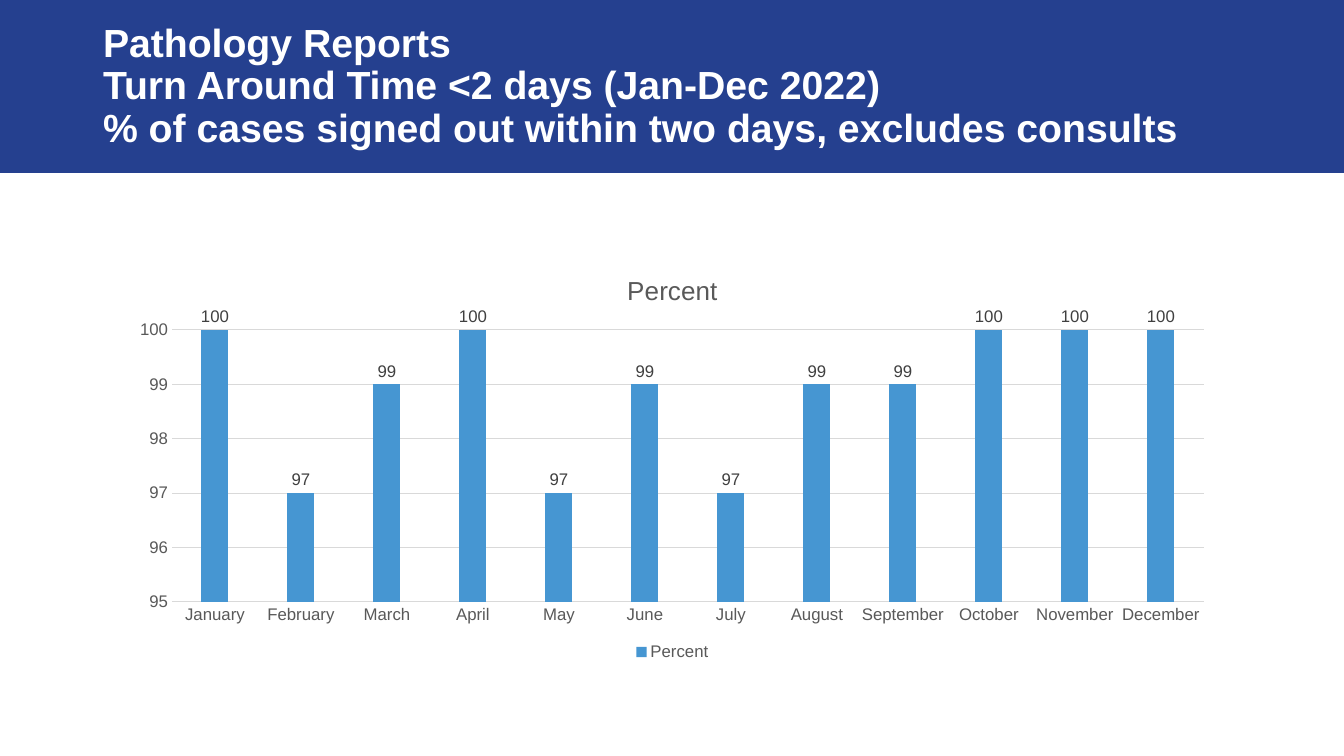
from dataclasses import dataclass

from lxml import etree
from pptx import Presentation
from pptx import util as u
from pptx.chart import data
from pptx.dml.color import RGBColor
from pptx.enum import chart as ch, shapes, text
from pptx.oxml import ns

# Content
HEAD = [
    "Pathology Reports",
    "Turn Around Time <2 days (Jan-Dec 2022)",
    "% of cases signed out within two days, excludes consults",
]
NAME = "Percent"
CASES = {
    "January": 100, "February": 97, "March": 99, "April": 100,
    "May": 97, "June": 99, "July": 97, "August": 99,
    "September": 99, "October": 100, "November": 100, "December": 100,
}

# Places in px: left, top, width, height
PAGE = (1344, 756)
BAND = (0, 0, 1344, 173)
TITLE = (93, 14, 1159, 146)
CHART = (118, 255, 1109, 410)
PLOT = (172, 330, 1032, 272)


@dataclass
class Theme:
    font: str = "Arial"
    band: str = "25408F"
    white: str = "FFFFFF"
    bar: str = "4696D2"
    grid: str = "D9D9D9"
    grey: str = "595959"
    dark: str = "404040"
    head: float = 28
    name: float = 18.6
    label: float = 12


T = Theme()


def px(n):
    return round(n * 914400 / 100.8)


def rgb(code):
    return RGBColor.from_string(code)


def style(font, size, color, bold=False):
    font.name = T.font
    font.size = u.Pt(size)
    font.bold = bold
    font.color.rgb = rgb(color)


def rule(line):
    line.color.rgb = rgb(T.grid)
    line.width = u.Pt(0.75)


def place(shape, box):
    shape.left, shape.top, shape.width, shape.height = map(px, box)


def set_plot(chart):
    """Fix the inner plot area as fractions of the chart frame."""
    area = chart.element.find(".//" + ns.qn("c:plotArea"))
    old = area.find(ns.qn("c:layout"))
    if old is not None:
        area.remove(old)
    layout = etree.Element(ns.qn("c:layout"))
    area.insert(0, layout)
    man = etree.SubElement(layout, ns.qn("c:manualLayout"))
    left, top, wide, high = CHART
    parts = {
        "layoutTarget": "inner", "xMode": "edge", "yMode": "edge",
        "x": (PLOT[0] - left) / wide, "y": (PLOT[1] - top) / high,
        "w": PLOT[2] / wide, "h": PLOT[3] / high,
    }
    for tag, val in parts.items():
        etree.SubElement(man, ns.qn("c:" + tag)).set("val", str(val))


def add_head(slide):
    # Band behind the title
    band = slide.shapes.add_shape(shapes.MSO_SHAPE.RECTANGLE, *map(px, BAND))
    band.shadow.inherit = False
    band.fill.solid()
    band.fill.fore_color.rgb = rgb(T.band)
    band.line.fill.background()
    slide.shapes.element.insert(2, band.element)

    # Title
    title = slide.shapes.title
    place(title, TITLE)
    frame = title.text_frame
    frame.word_wrap = True
    frame.auto_size = text.MSO_AUTO_SIZE.NONE
    frame.vertical_anchor = text.MSO_ANCHOR.MIDDLE
    para = frame.paragraphs[0]
    para.text = "\v".join(HEAD)
    para.alignment = text.PP_ALIGN.LEFT
    para.line_spacing = 0.9
    for run in para.runs:
        style(run.font, T.head, T.white, True)


def add_chart(slide):
    info = data.CategoryChartData(number_format="General")
    info.categories = list(CASES)
    info.add_series(NAME, list(CASES.values()))
    kind = ch.XL_CHART_TYPE.COLUMN_CLUSTERED
    chart = slide.shapes.add_chart(kind, *map(px, CHART), info).chart
    style(chart.font, T.label, T.grey)

    # Chart title and legend
    chart.has_title = True
    frame = chart.chart_title.text_frame
    frame.text = NAME
    style(frame.paragraphs[0].runs[0].font, T.name, T.grey)
    chart.has_legend = True
    chart.legend.position = ch.XL_LEGEND_POSITION.BOTTOM
    chart.legend.include_in_layout = False
    style(chart.legend.font, T.label, T.grey)

    # Axes
    cat, val = chart.category_axis, chart.value_axis
    for axis in (cat, val):
        axis.major_tick_mark = axis.minor_tick_mark = ch.XL_TICK_MARK.NONE
        style(axis.tick_labels.font, T.label, T.grey)
    rule(cat.format.line)
    val.format.line.fill.background()
    val.minimum_scale, val.maximum_scale, val.major_unit = 95, 100, 1
    val.has_major_gridlines = True
    rule(val.major_gridlines.format.line)

    # Bars and their values
    plot = chart.plots[0]
    plot.vary_by_categories = False
    plot.gap_width, plot.overlap = 219, -27
    bars = plot.series[0]
    bars.format.fill.solid()
    bars.format.fill.fore_color.rgb = rgb(T.bar)
    labels = bars.data_labels
    labels.show_value = True
    labels.position = ch.XL_LABEL_POSITION.OUTSIDE_END
    style(labels.font, T.label, T.dark)
    set_plot(chart)


def main():
    deck = Presentation()
    deck.slide_width, deck.slide_height = map(px, PAGE)
    slide = deck.slides.add_slide(deck.slide_layouts[5])
    add_head(slide)
    add_chart(slide)
    deck.save("out.pptx")


if __name__ == "__main__":
    main()
